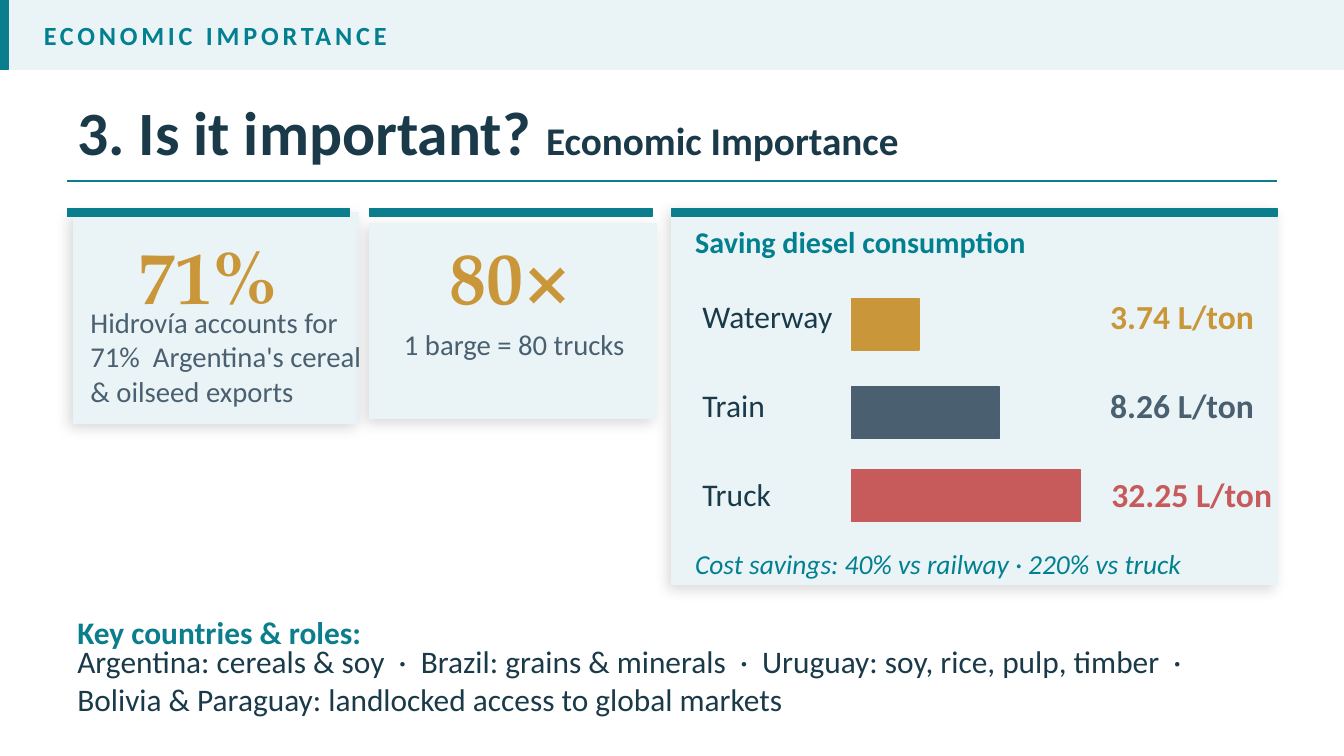
from lxml.etree import SubElement
from pptx import Presentation
from pptx.dml.color import RGBColor
from pptx.enum.shapes import MSO_CONNECTOR, MSO_SHAPE
from pptx.enum.text import MSO_ANCHOR, PP_ALIGN
from pptx.oxml.ns import qn
from pptx.util import Cm, Pt

HUES = {
    "pale": "EAF4F6", "teal": "0A7E8C", "sea": "028090", "ink": "1A3A4A",
    "slate": "4A6070", "gold": "C9973A", "red": "C75B5B", "black": "000000",
}
SANS, SERIF = "Calibri", "TeX Gyre Pagella"
LEFT, MID, RIGHT = PP_ALIGN.LEFT, PP_ALIGN.CENTER, PP_ALIGN.RIGHT


def style(size, hue, name=SANS, **more):
    return {"size": Pt(size), "name": name, "hue": hue, **more}


class Deck:
    def __init__(self):
        self.prs = Presentation()
        self.prs.slide_width, self.prs.slide_height = Cm(33.87), Cm(19.05)
        self.slide = self.prs.slides.add_slide(self.prs.slide_layouts[6])

    def hue(self, name):
        return RGBColor.from_string(HUES[name])

    def rect(self, x, y, w, h, hue, shade=False):
        box = self.slide.shapes.add_shape(
            MSO_SHAPE.RECTANGLE, Cm(x), Cm(y), Cm(w), Cm(h))
        box.shadow.inherit = False
        box.fill.solid()
        box.fill.fore_color.rgb = box.line.color.rgb = self.hue(hue)
        box.line.width = Pt(1)
        if shade:
            self.shade(box)

    def shade(self, box):
        glow = SubElement(
            box._element.spPr.find(qn("a:effectLst")), qn("a:outerShdw"),
            blurRad=str(Pt(10)), dist=str(Pt(4)), dir=str(135 * 60000),
            algn="bl", rotWithShape="0")
        tint = SubElement(glow, qn("a:srgbClr"), val=HUES["black"])
        SubElement(tint, qn("a:alpha"), val="15000")

    def rule(self, x, y, end, hue):
        line = self.slide.shapes.add_connector(
            MSO_CONNECTOR.STRAIGHT, Cm(x), Cm(y), Cm(end), Cm(y))
        line.line.color.rgb = self.hue(hue)
        line.line.width = Pt(1.5)
        SubElement(line._element.spPr, qn("a:effectLst"))

    def text(self, x, y, w, h, lines, look, align=LEFT):
        """Each line is a string or a list of (string, look) pairs."""
        box = self.slide.shapes.add_textbox(Cm(x), Cm(y), Cm(w), Cm(h))
        frame = box.text_frame
        frame.word_wrap = True
        frame.vertical_anchor = MSO_ANCHOR.MIDDLE
        for i, line in enumerate(lines):
            para = frame.add_paragraph() if i else frame.paragraphs[0]
            para.alignment = align
            parts = [(line, look)] if isinstance(line, str) else line
            for words, form in parts:
                self.run(para, words, form)

    def run(self, para, words, form):
        run = para.add_run()
        run.text = words
        for key, value in form.items():
            if key == "hue":
                run.font.color.rgb = self.hue(value)
            elif key == "space":
                run.font._element.set("spc", str(round(value * 100)))
            else:
                setattr(run.font, key, value)

    def card(self, x, y, w, h, top, wide):
        self.rect(x, y, w, h, "pale", shade=True)
        self.rect(x if x > 2 else LEAD, top, wide, 0.2, "teal")


LEAD, TOP, STEP = 1.7, 5.26, 7.62
BIG = style(52.8, "gold", SERIF, bold=True)
NOTE = style(20.5, "slate")
BODY = style(22.4, "ink")


def main():
    deck = Deck()

    # Header band
    deck.rect(0, 0, 33.87, 1.75, "pale")
    deck.rect(0, 0, 0.2, 1.75, "teal")
    deck.text(0.61, 0, 32.51, 1.75, [" ECONOMIC IMPORTANCE"],
              style(18.7, "sea", bold=True, space=2.7))

    # Title
    head = style(44, "ink", bold=True)
    deck.text(LEAD, 2.11, 30.48, 2.36, [[
        ("3. Is it important?", head),
        (" ", style(41.6, "ink", SERIF, bold=True)),
        ("Economic Importance", {**head, "size": Pt(28)}),
    ]], head)
    deck.rule(LEAD, 4.55, 32.18, "teal")

    # Export share card
    deck.card(1.85, 5.36, 7.19, 5.31, TOP, 7.11)
    deck.text(2.03, 8.23, 7.39, 1.5, [
        "Hidrovía accounts for", "71%  Argentina's cereal",
        "& oilseed exports"], NOTE)

    # Barge card
    deck.card(LEAD + STEP, 5.64, 7.21, 4.9, TOP, 7.11)
    deck.text(9.83, 7.62, 6.27, 2.11, ["1 barge = 80 trucks"], NOTE, MID)

    # Big figures
    for i, fact in enumerate(["71%", "80×"]):
        deck.text(2.03 + i * STEP, 5.66, 6.43, 2.54, [fact], BIG, MID)

    # Diesel card
    deck.card(LEAD + 2 * STEP, TOP, 15.24, 9.47, TOP, 15.24)
    deck.text(17.27, 5.49, 14.55, 1.19, ["Saving diesel consumption"],
              style(21.5, "sea", bold=True))
    rows = [
        ("Waterway", "3.74 L/ton", "gold", 7.52, 1.7, 31.85),
        ("Train", "8.26 L/ton", "slate", 9.75, 3.73, 31.85),
        ("Truck", "32.25 L/ton", "red", 11.84, 5.77, 32.31),
    ]
    for i, (name, rate, hue, bar, wide, end) in enumerate(rows):
        y = 7.04 + i * 2.24
        deck.text(17.45, y, 6.78, 1.85, [name], style(22.5, "ink"))
        deck.rect(21.46, bar, wide, 1.3, hue)
        deck.text(27.1, y, end - 27.1, 1.85, [rate],
                  style(24, hue, bold=True), RIGHT)
    deck.text(17.27, 13.82, 14.55, 0.74,
              ["Cost savings: 40% vs railway · 220% vs truck"],
              style(19.6, "sea", italic=True))

    # Countries
    deck.text(LEAD, 15.42, 30.48, 1.02, ["Key countries & roles:"],
              style(22.4, "teal", bold=True))
    deck.text(LEAD, 16.54, 30.48, 1.19, [
        "Argentina: cereals & soy  ·  Brazil: grains & minerals  ·  "
        "Uruguay: soy, rice, pulp, timber  ·  "
        "Bolivia & Paraguay: landlocked access to global markets"], BODY)

    deck.prs.save("out.pptx")


if __name__ == "__main__":
    main()
